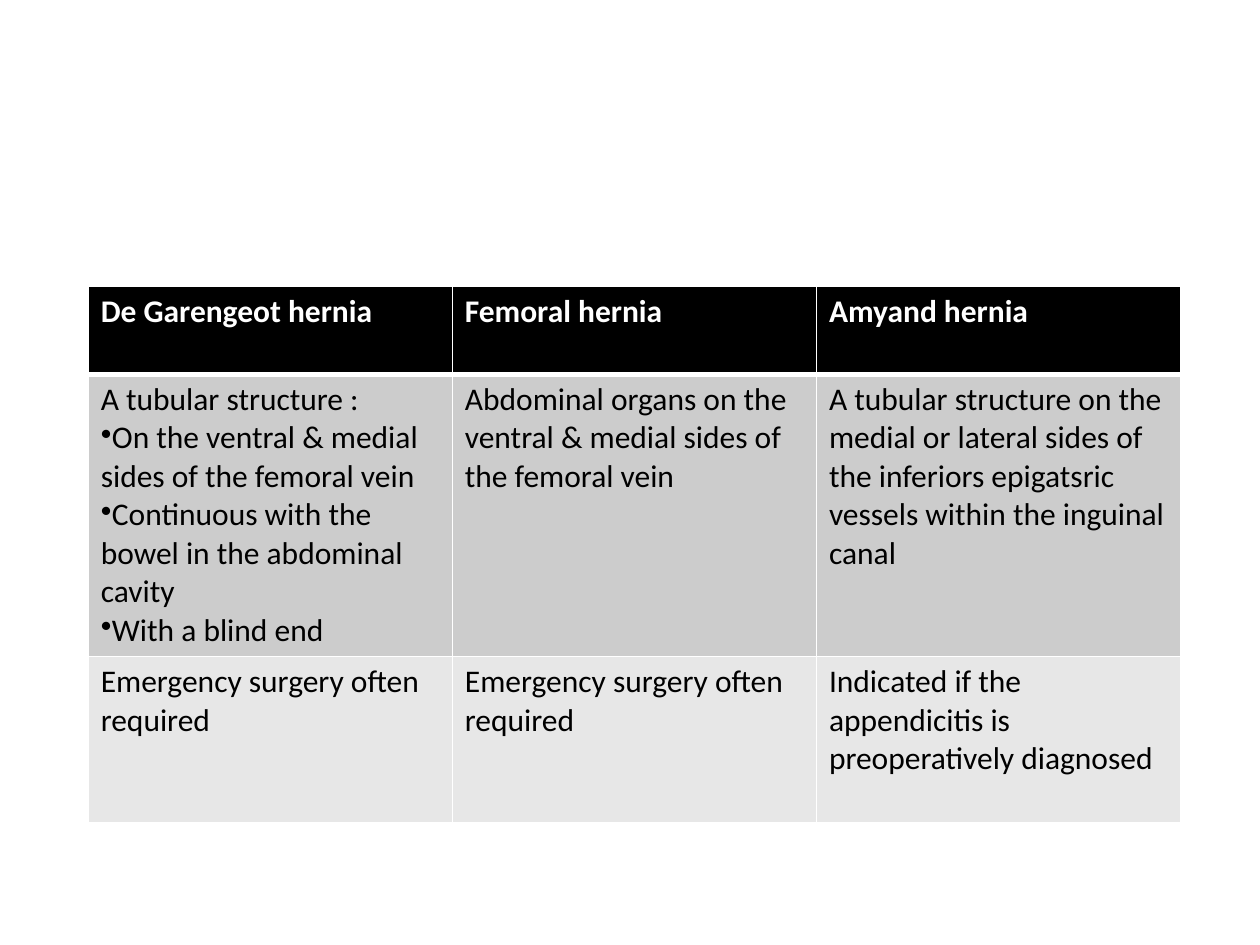
from dataclasses import dataclass

from lxml import etree
from pptx import Presentation
from pptx import util as u
from pptx.dml.color import RGBColor
from pptx.oxml import ns


@dataclass(frozen=True)
class Theme:
    font: str = "Calibri"
    body_size: int = 18
    header_text: str = "FFFFFF"
    body_text: str = "000000"
    rule: str = "FFFFFF"
    row_fills: tuple = ("000000", "CCCCCC", "E7E7E7")
    thin_rule: int = 1
    header_rule: int = 3


THEME = Theme()
BULLET = "•"
COLUMN_WIDTH = 2.89
ROW_HEIGHTS = (0.7, 2.24, 1.32)

# Each cell is a list of paragraphs; a leading bullet marks a list item
HERNIA_ROWS = (
    (["De Garengeot hernia"], ["Femoral hernia"], ["Amyand hernia"]),
    (
        [
            "A tubular structure :",
            "•On the ventral & medial sides of the femoral vein",
            "•Continuous with the bowel in the abdominal cavity",
            "•With a blind end",
        ],
        ["Abdominal organs on the ventral & medial sides of the femoral vein"],
        ["A tubular structure on the medial or lateral sides of the inferiors "
         "epigatsric vessels within the inguinal canal"],
    ),
    (
        ["Emergency surgery often required"],
        ["Emergency surgery often required"],
        ["Indicated if the appendicitis is preoperatively diagnosed"],
    ),
)


def add_borders(cell, widths):
    properties = cell._tc.get_or_add_tcPr()
    for side, points in widths.items():
        rule = etree.SubElement(properties, ns.qn(f"a:ln{side}"), w=str(u.Pt(points)))
        fill = etree.SubElement(rule, ns.qn("a:solidFill"))
        etree.SubElement(fill, ns.qn("a:srgbClr"), val=THEME.rule)


def add_bullet(paragraph):
    properties = paragraph._p.get_or_add_pPr()
    etree.SubElement(properties, ns.qn("a:buChar"), char=BULLET)


def write_paragraph(paragraph, wording, is_header):
    if wording.startswith(BULLET):
        add_bullet(paragraph)
    run = paragraph.add_run()
    run.text = wording.removeprefix(BULLET)
    font_format = {"name": THEME.font, "size": u.Pt(THEME.body_size), "bold": is_header}
    for attribute, value in font_format.items():
        setattr(run.font, attribute, value)
    color = THEME.header_text if is_header else THEME.body_text
    run.font.color.rgb = RGBColor.from_string(color)


def fill_cell(cell, paragraphs, row):
    # Heavier rule between the header and the body
    top = THEME.header_rule if row == 1 else THEME.thin_rule
    bottom = THEME.header_rule if row == 0 else THEME.thin_rule
    add_borders(cell, {"L": THEME.thin_rule, "R": THEME.thin_rule, "T": top, "B": bottom})
    cell.fill.solid()
    cell.fill.fore_color.rgb = RGBColor.from_string(THEME.row_fills[row])
    frame = cell.text_frame
    for index, wording in enumerate(paragraphs):
        paragraph = frame.add_paragraph() if index else frame.paragraphs[0]
        write_paragraph(paragraph, wording, is_header=row == 0)


def add_hernia_table(slide):
    column_count = len(HERNIA_ROWS[0])
    comparison = slide.shapes.add_table(
        len(HERNIA_ROWS), column_count, u.Inches(0.7), u.Inches(2.27),
        u.Inches(COLUMN_WIDTH * column_count), u.Inches(sum(ROW_HEIGHTS)),
    ).table
    comparison.horz_banding = False
    for column in comparison.columns:
        column.width = u.Inches(COLUMN_WIDTH)
    for row, (height, contents) in enumerate(zip(ROW_HEIGHTS, HERNIA_ROWS)):
        comparison.rows[row].height = u.Inches(height)
        for column, paragraphs in enumerate(contents):
            fill_cell(comparison.cell(row, column), paragraphs, row)


def main():
    deck = Presentation()
    deck.slide_width, deck.slide_height = u.Inches(10), u.Inches(7.5)
    # The slide has no title, so it uses the blank layout
    slide = deck.slides.add_slide(deck.slide_layouts[6])
    add_hernia_table(slide)
    deck.save("out.pptx")


if __name__ == "__main__":
    main()
